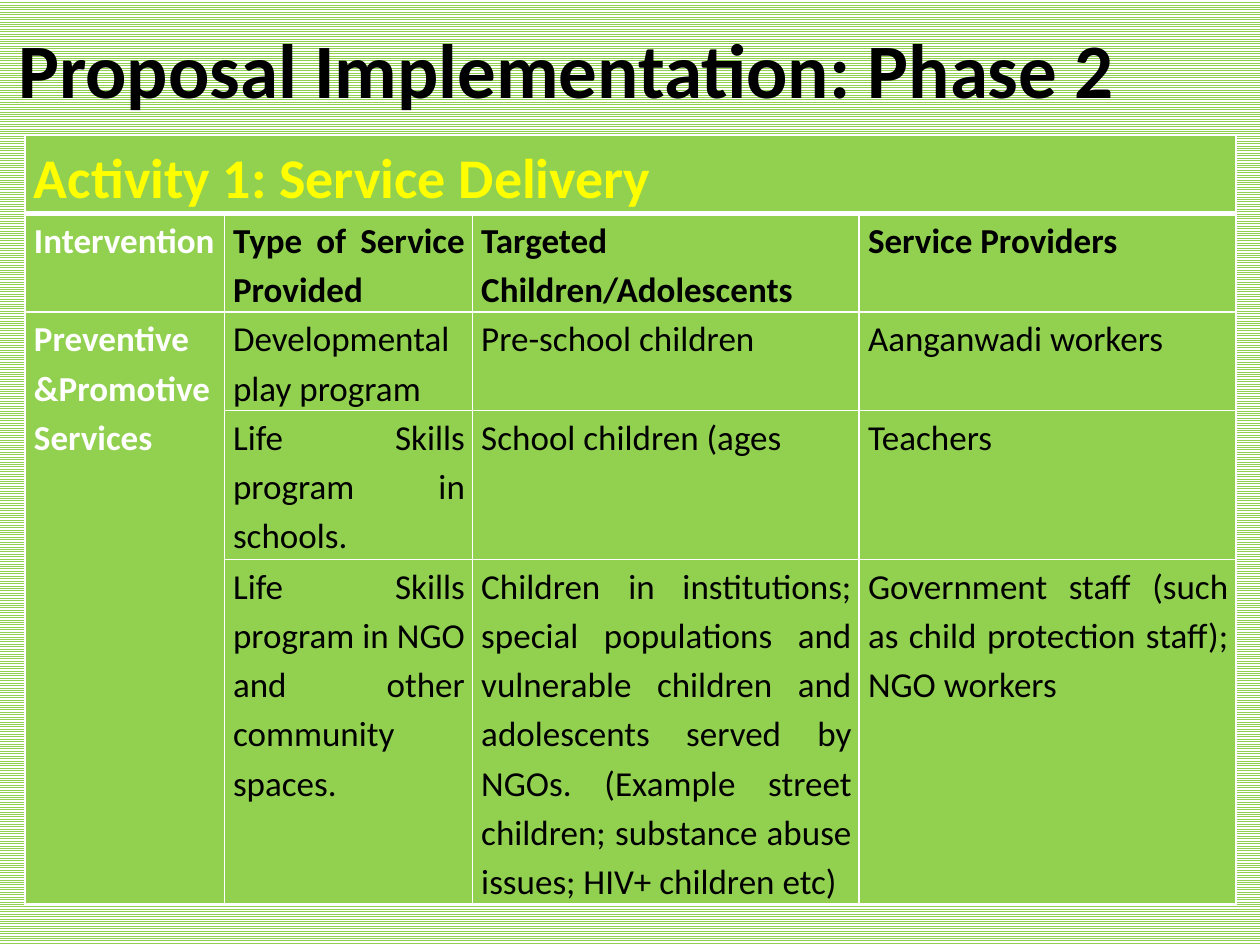
from dataclasses import dataclass
from lxml import etree
from pptx import Presentation
from pptx import util as u
from pptx.dml.color import RGBColor
from pptx.enum import dml, text
from pptx.oxml.ns import qn

GREEN, WHITE, BLACK, YELLOW = "92D050", "FFFFFF", "000000", "FFFF00"
COLS = (1.58, 1.97, 3.07, 2.99)
ROWS = (0.62, 0.78, 0.78, 1.18, 2.73)


@dataclass
class Entry:
    row: int
    col: int
    words: str
    size: int = 20
    color: str = BLACK
    bold: bool = False
    rows: int = 1
    cols: int = 1


ENTRIES = (
    Entry(0, 0, "Activity 1: Service Delivery", 32, YELLOW, True, cols=4),
    Entry(1, 0, "Intervention", color=WHITE, bold=True),
    Entry(1, 1, "Type of Service Provided", bold=True),
    Entry(1, 2, "Targeted Children/Adolescents", bold=True),
    Entry(1, 3, "Service Providers", bold=True),
    Entry(2, 0, "Preventive &Promotive Services", color=WHITE, bold=True, rows=3),
    Entry(2, 1, "Developmental play program"),
    Entry(2, 2, "Pre-school children"),
    Entry(2, 3, "Aanganwadi workers"),
    Entry(3, 1, "Life Skills program in schools."),
    Entry(3, 2, "School children (ages"),
    Entry(3, 3, "Teachers"),
    Entry(4, 1, "Life Skills program in NGO and other community spaces."),
    Entry(4, 2, "Children in institutions; special populations and vulnerable "
                "children and adolescents served by NGOs. (Example street "
                "children; substance abuse issues; HIV+ children etc)"),
    Entry(4, 3, "Government staff (such as child protection staff); NGO workers"),
)


def rgb(code: str) -> RGBColor:
    return RGBColor.from_string(code)


def write(frame, words: str, *, size: int, color: str = BLACK,
          bold: bool = False, align=text.PP_ALIGN.JUSTIFY, space=None) -> None:
    para = frame.paragraphs[0]
    para.alignment, para.line_spacing = align, space
    run = para.add_run()
    run.text = words
    font = run.font
    font.name, font.size, font.bold = "Calibri", u.Pt(size), bold
    font.color.rgb = rgb(color)


def border(cell, base: float) -> None:
    """White rules on all four sides, the lower one of the given width."""
    props = cell._tc.get_or_add_tcPr()
    for side, width in zip("LRTB", (1, 1, 1, base)):
        line = etree.SubElement(props, qn(f"a:ln{side}"), w=str(u.Pt(width)))
        fill = etree.SubElement(line, qn("a:solidFill"))
        etree.SubElement(fill, qn("a:srgbClr"), val=WHITE)


def style(cell, row: int) -> None:
    border(cell, 3 if row == 0 else 1)
    cell.fill.solid()
    cell.fill.fore_color.rgb = rgb(GREEN)
    cell.margin_left, cell.margin_right = u.Inches(0.07), u.Inches(0.06)
    cell.margin_top = cell.margin_bottom = 0


def enter(grid, item: Entry) -> None:
    cell = grid.cell(item.row, item.col)
    if item.rows * item.cols > 1:
        cell.merge(grid.cell(item.row + item.rows - 1, item.col + item.cols - 1))
    write(cell.text_frame, item.words, size=item.size, color=item.color,
          bold=item.bold, space=1.15)


def main() -> None:
    deck = Presentation()
    deck.slide_width, deck.slide_height = u.Inches(10), u.Inches(7.5)
    slide = deck.slides.add_slide(deck.slide_layouts[5])

    # Striped background
    back = slide.background.fill
    back.patterned()
    back.pattern = dml.MSO_PATTERN.NARROW_HORIZONTAL
    back.fore_color.rgb, back.back_color.rgb = rgb(GREEN), rgb(WHITE)

    # Title
    title = slide.shapes.title
    title.left, title.top = 0, u.Inches(0.01)
    title.width, title.height = int(deck.slide_width * 0.9), u.Inches(1.06)
    title.text_frame.vertical_anchor = text.MSO_ANCHOR.MIDDLE
    write(title.text_frame, "Proposal Implementation: Phase 2", size=44,
          bold=True, align=text.PP_ALIGN.CENTER)

    # Activity table
    grid = slide.shapes.add_table(
        len(ROWS), len(COLS), u.Inches(0.2), u.Inches(1.07),
        u.Inches(sum(COLS)), u.Inches(sum(ROWS))).table
    for col, width in zip(grid.columns, COLS):
        col.width = u.Inches(width)
    for num, (row, height) in enumerate(zip(grid.rows, ROWS)):
        row.height = u.Inches(height)
        for cell in row.cells:
            style(cell, num)
    for item in ENTRIES:
        enter(grid, item)

    deck.save("out.pptx")


if __name__ == "__main__":
    main()
